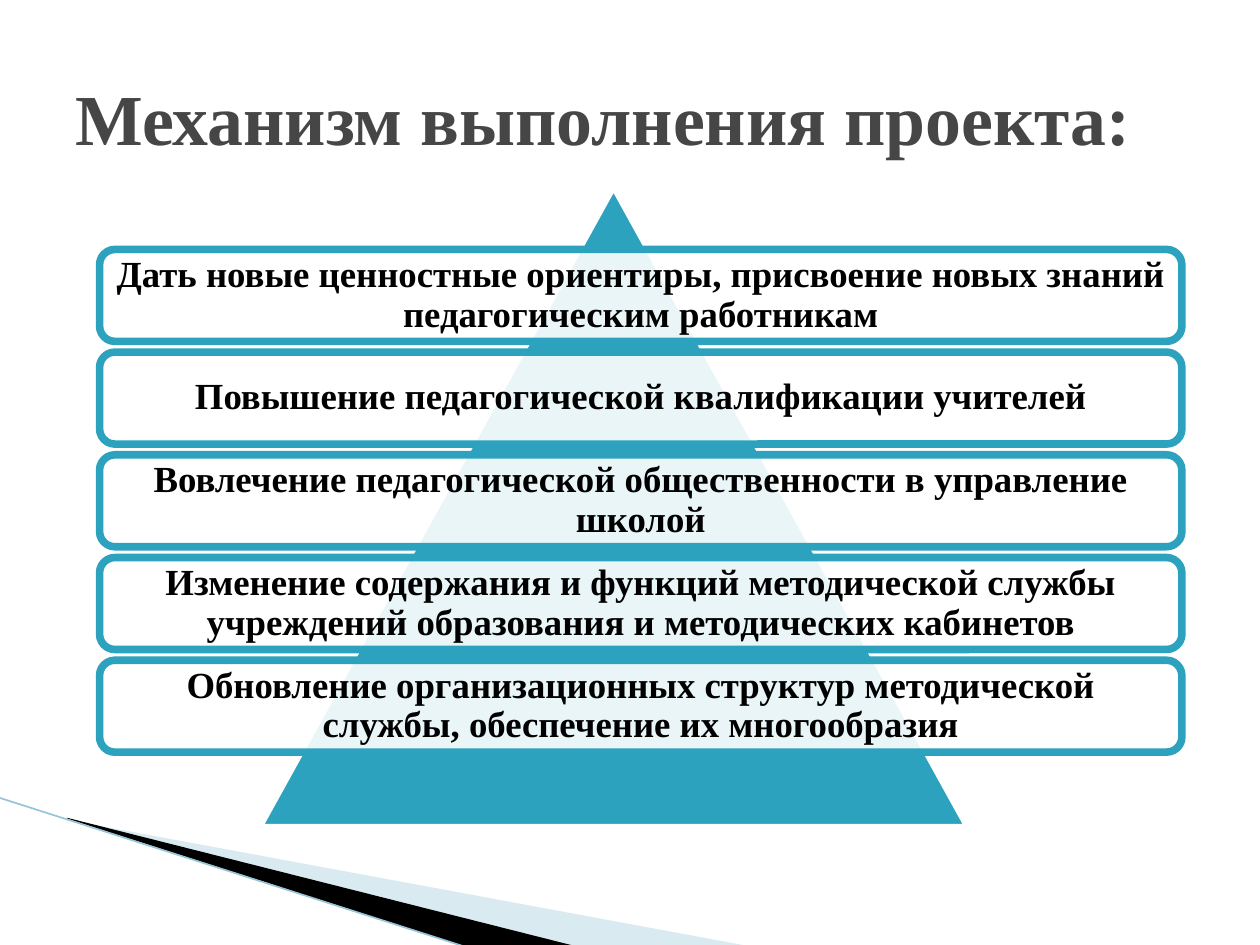
from pptx import Presentation
from pptx.dml.color import RGBColor
from pptx.enum.shapes import MSO_CONNECTOR, MSO_SHAPE
from pptx.enum.text import MSO_ANCHOR, PP_ALIGN
from pptx.oxml.ns import qn
from pptx.util import Inches, Pt
from lxml.etree import SubElement

FONT = "Times New Roman"
TEAL = "2DA2BF"
LINE_WIDTH = 4.33
GOALS = [
    "Дать новые ценностные ориентиры, присвоение новых знаний педагогическим работникам",
    "Повышение педагогической квалификации учителей",
    "Вовлечение педагогической общественности в управление школой",
    "Изменение содержания и функций методической службы учреждений образования и методических кабинетов",
    "Обновление организационных структур методической службы, обеспечение их многообразия",
]
GOAL_TOP, GOAL_STEP = 1.98, 0.815


def color(value):
    return RGBColor.from_string(value)


def set_fill(shape, value, opacity=100):
    shape.fill.solid()
    shape.fill.fore_color.rgb = color(value)
    if opacity < 100:
        solid = shape.fill._xPr.find(qn("a:solidFill"))
        SubElement(solid[0], qn("a:alpha"), val=str(opacity * 1000))


def set_line(shape, value, width):
    shape.line.color.rgb = color(value)
    shape.line.width = Pt(width)


def set_text(shape, text, size, value, align):
    frame = shape.text_frame
    frame.word_wrap = True
    frame.vertical_anchor = MSO_ANCHOR.MIDDLE
    frame.text = text
    paragraph = frame.paragraphs[0]
    paragraph.alignment = align
    paragraph.font.name = FONT
    paragraph.font.size = Pt(size)
    paragraph.font.bold = True
    paragraph.font.color.rgb = color(value)
    return frame, paragraph


def add_wedge(slide, points, value, opacity=100):
    corners = [(Inches(x), Inches(y)) for x, y in points]
    builder = slide.shapes.build_freeform(*corners[0])
    builder.add_line_segments(corners[1:], close=True)
    wedge = builder.convert_to_shape()
    wedge.shadow.inherit = False
    set_fill(wedge, value, opacity)
    wedge.line.fill.background()


def add_edge(slide, start, end, value, width):
    edge = slide.shapes.add_connector(
        MSO_CONNECTOR.STRAIGHT, *map(Inches, start + end))
    set_line(edge, value, width)
    SubElement(edge._element.spPr, qn("a:effectLst"))


def add_outlined_shape(slide, kind, box, fill, line, opacity=100):
    shape = slide.shapes.add_shape(kind, *map(Inches, box))
    shape.shadow.inherit = False
    set_fill(shape, fill, opacity)
    set_line(shape, line, LINE_WIDTH)
    return shape


def add_goal(slide, top, text):
    box = (0.79, top, 8.59, 0.73)
    goal = add_outlined_shape(
        slide, MSO_SHAPE.ROUNDED_RECTANGLE, box, "FFFFFF", TEAL, opacity=90)
    frame, paragraph = set_text(goal, text, 21, "000000", PP_ALIGN.CENTER)
    frame.margin_left = frame.margin_right = Inches(0.09)
    frame.margin_top = frame.margin_bottom = Inches(0.09)
    paragraph.line_spacing = 0.9


def add_title(slide, text):
    title = slide.shapes.add_textbox(
        Inches(0.5), Inches(0.3), Inches(9), Inches(1.25))
    set_text(title, text, 41, "464646", PP_ALIGN.LEFT)


def main():
    presentation = Presentation()
    presentation.slide_width = Inches(10)
    presentation.slide_height = Inches(7.5)
    slide = presentation.slides.add_slide(presentation.slide_layouts[6])

    add_wedge(slide, [(0.55, 6.51), (5.95, 7.51), (4.56, 7.51), (0.55, 6.5)],
              "A0CBDC", opacity=40)
    add_wedge(slide, [(0.53, 6.49), (4.57, 7.51), (3.72, 7.52), (0.54, 6.5)],
              "000000")
    add_edge(slide, (-0.01, 6.33), (3.71, 7.52), "97C5D8", 0.95)

    add_outlined_shape(slide, MSO_SHAPE.ISOSCELES_TRIANGLE,
                       (2.05, 1.47, 5.64, 5.1), TEAL, "FFFFFF")
    for index, text in enumerate(GOALS):
        add_goal(slide, GOAL_TOP + index * GOAL_STEP, text)
    add_title(slide, "Механизм выполнения проекта:")

    presentation.save("out.pptx")


if __name__ == "__main__":
    main()
